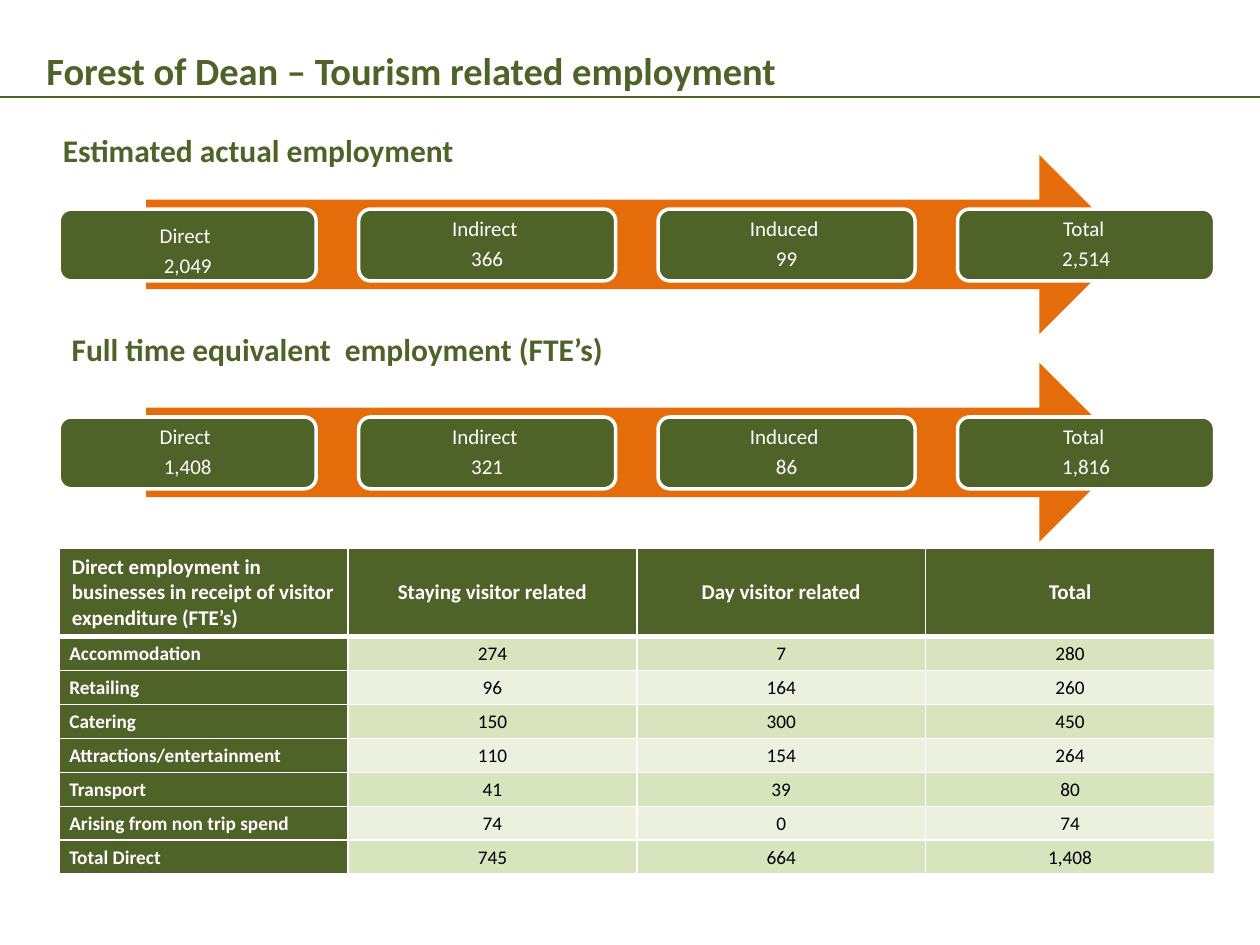
from dataclasses import dataclass

from lxml.etree import SubElement as Sub
from pptx import Presentation as Deck
from pptx.dml.color import RGBColor as Rgb
from pptx.enum.shapes import MSO_CONNECTOR as Link, MSO_SHAPE as Form
from pptx.enum.text import MSO_ANCHOR as Anchor, PP_ALIGN as Align
from pptx.oxml.ns import qn
from pptx.util import Inches, Pt


@dataclass(frozen=True)
class Theme:
    font: str = "Calibri"
    green: str = "4F6228"
    orange: str = "E46C0A"
    white: str = "FFFFFF"
    black: str = "000000"
    bands: tuple = ("D7E4BD", "EBF1DE")
    title: int = 22
    head: int = 18
    body: int = 12
    small: int = 11


@dataclass(frozen=True)
class Label:
    text: str
    left: float
    top: float
    width: float
    height: float
    size: int
    wrap: bool = False
    space: float = 1.0


@dataclass(frozen=True)
class Flow:
    top: float
    counts: tuple
    drop: float = 0


THEME = Theme()
LEFT, WIDE = 0.47, 9.17
CARD_W, CARD_H = 2.04, 0.57
KINDS = ("Direct ", "Indirect ", "Induced ", "Total ")

LABELS = (
    Label("Forest of Dean – Tourism related employment",
          0.27, 0.25, 9.53, 0.55, THEME.title, True, 1.2),
    Label("Estimated actual employment", 0.4, 0.99, 3.33, 0.4, THEME.head),
    Label("Full time equivalent  employment (FTE’s)",
          0.47, 2.57, 4.45, 0.4, THEME.head),
)
FLOWS = (
    Flow(1.23, ("2,049", "366", "99", "2,514"), 0.05),
    Flow(2.88, ("1,408", "321", "86", "1,816")),
)
ROWS = (
    ("Direct employment in businesses in receipt of visitor expenditure (FTE’s)",
     "Staying visitor related", "Day visitor related", "Total"),
    ("Accommodation", "274", "7", "280"),
    ("Retailing", "96", "164", "260"),
    ("Catering", "150", "300", "450"),
    ("Attractions/entertainment", "110", "154", "264"),
    ("Transport", "41", "39", "80"),
    ("Arising from non trip spend", "74", "0", "74"),
    ("Total Direct", "745", "664", "1,408"),
)


def style(para, size: int, color: str, bold: bool = False) -> None:
    for run in para.runs:
        run.font.name = THEME.font
        run.font.size = Pt(size)
        run.font.bold = bold
        run.font.color.rgb = Rgb.from_string(color)


def paint(item, color: str) -> None:
    item.fill.solid()
    item.fill.fore_color.rgb = Rgb.from_string(color)


def pad(frame, left: float, top: float, right: float, bottom: float) -> None:
    frame.margin_left, frame.margin_top = Inches(left), Inches(top)
    frame.margin_right, frame.margin_bottom = Inches(right), Inches(bottom)


def add_label(slide, label: Label) -> None:
    box = slide.shapes.add_textbox(Inches(label.left), Inches(label.top),
                                   Inches(label.width), Inches(label.height))
    frame = box.text_frame
    frame.word_wrap = label.wrap
    frame.text = label.text
    para = frame.paragraphs[0]
    para.line_spacing = label.space
    style(para, label.size, THEME.green, True)


def add_rule(slide, top: float) -> None:
    rule = slide.shapes.add_connector(Link.STRAIGHT, Inches(0), Inches(top),
                                      Inches(10), Inches(top))
    rule.line.color.rgb = Rgb.from_string(THEME.green)
    rule.line.width = Pt(0.75)
    Sub(rule._element.spPr, qn("a:effectLst"))


def add_card(group, left: float, top: float, text: str, drop: float) -> None:
    card = group.shapes.add_shape(Form.ROUNDED_RECTANGLE, Inches(left),
                                  Inches(top), Inches(CARD_W), Inches(CARD_H))
    card.shadow.inherit = False
    paint(card, THEME.green)
    card.line.color.rgb = Rgb.from_string(THEME.white)
    card.line.width = Pt(2)
    frame = card.text_frame
    frame.word_wrap = True
    frame.vertical_anchor = Anchor.MIDDLE
    pad(frame, 0.05, 0.05 + drop, 0.05, 0.05 - drop)
    frame.text = text
    for para in frame.paragraphs:
        para.alignment = Align.CENTER
        para.line_spacing = 0.9
        para.space_after = Pt(4.2)
        style(para, THEME.body, THEME.white)


def add_flow(slide, flow: Flow) -> None:
    group = slide.shapes.add_group_shape()
    arrow = group.shapes.add_shape(Form.RIGHT_ARROW, Inches(1.16),
                                   Inches(flow.top), Inches(7.8), Inches(1.42))
    arrow.shadow.inherit = False
    paint(arrow, THEME.orange)
    arrow.line.fill.background()
    step = (WIDE - CARD_W) / (len(KINDS) - 1)
    for i, (kind, count) in enumerate(zip(KINDS, flow.counts)):
        add_card(group, LEFT + i * step, flow.top + 0.43,
                 f"{kind}\n{count}", 0 if i else flow.drop)


def edge(cell, low: float) -> None:
    props = cell._tc.get_or_add_tcPr()
    sides = (("lnL", 1), ("lnR", 1), ("lnT", 1), ("lnB", low))
    for i, (side, width) in enumerate(sides):
        line = Sub(props, qn(f"a:{side}"), w=str(Pt(width)))
        fill = Sub(line, qn("a:solidFill"))
        Sub(fill, qn("a:srgbClr"), val=THEME.white)
        props.insert(i, line)


def add_grid(slide) -> None:
    cols = len(ROWS[0])
    grid = slide.shapes.add_table(len(ROWS), cols, Inches(LEFT), Inches(4.35),
                                  Inches(WIDE), Inches(2.56)).table
    for col in grid.columns:
        col.width = Inches(WIDE / cols)
    for r, row in enumerate(ROWS):
        grid.rows[r].height = Inches(0.27 if r else 0.69)
        for c, text in enumerate(row):
            cell = grid.cell(r, c)
            dark = r == 0 or c == 0
            cell.vertical_anchor = Anchor.MIDDLE
            if r:
                pad(cell, 0.01 if c else 0.08, 0.01, 0.01, 0)
            paint(cell, THEME.green if dark else THEME.bands[(r - 1) % 2])
            edge(cell, 1 if r else 3)
            cell.text_frame.text = text
            para = cell.text_frame.paragraphs[0]
            para.alignment = Align.CENTER if c else Align.LEFT
            style(para, THEME.small if r else THEME.body,
                  THEME.white if dark else THEME.black, dark)


def main() -> None:
    deck = Deck()
    deck.slide_width, deck.slide_height = Inches(10), Inches(7.5)
    slide = deck.slides.add_slide(deck.slide_layouts[6])
    add_rule(slide, 0.77)
    for flow in FLOWS:
        add_flow(slide, flow)
    for label in LABELS:
        add_label(slide, label)
    add_grid(slide)
    deck.save("out.pptx")


if __name__ == "__main__":
    main()
